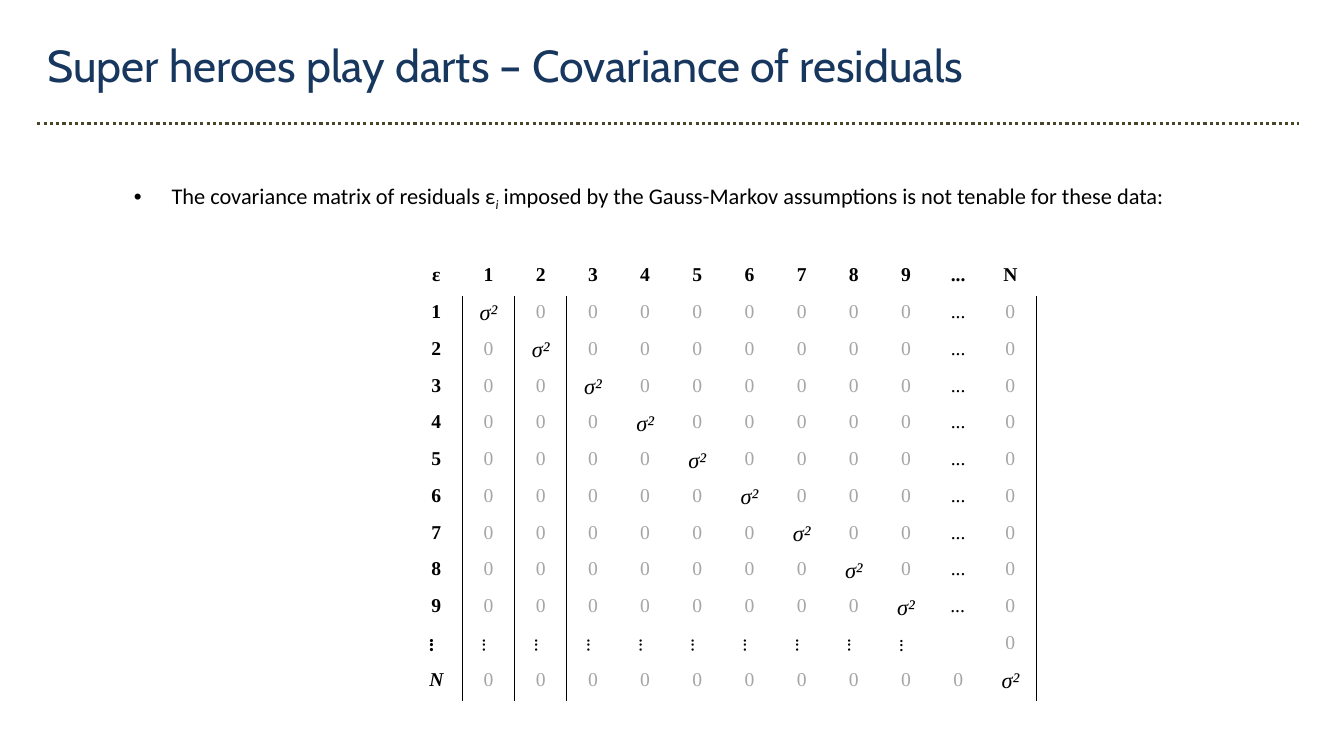
"""Build a slide that shows the covariance matrix of residuals."""
import lxml.etree
import pptx
import pptx.dml.color
import pptx.enum.dml
import pptx.enum.shapes
import pptx.enum.text
import pptx.oxml
import pptx.oxml.ns
import pptx.util

Cm = pptx.util.Cm
Pt = pptx.util.Pt
qn = pptx.oxml.ns.qn
RGBColor = pptx.dml.color.RGBColor
BLACK = RGBColor(0x00, 0x00, 0x00)
GREY = RGBColor(0xA6, 0xA6, 0xA6)
NAVY = RGBColor(0x17, 0x37, 0x5E)
OLIVE = RGBColor(0x4A, 0x45, 0x2A)
ALIGN = pptx.enum.text.PP_ALIGN


def write(para, text, font="Times New Roman", size=14, color=BLACK, bold=False, italic=False):
    run = para.add_run()
    run.text = text
    run.font.name = font
    run.font.size = Pt(size)
    run.font.color.rgb = color
    run.font.bold = bold
    run.font.italic = italic
    return run


def border(cell, sides):
    props = cell._tc.get_or_add_tcPr()
    for spot, side in enumerate(sides):
        line = pptx.oxml.parse_xml(
            f'<a:ln{side} xmlns:a="http://schemas.openxmlformats.org/drawingml/2006/main" w="{Pt(1)}">'
            f'<a:solidFill><a:srgbClr val="{BLACK}"/></a:solidFill></a:ln{side}>')
        props.insert(spot, line)


deck = pptx.Presentation()
deck.slide_width = Cm(33.87)
deck.slide_height = Cm(19.05)
slide = deck.slides.add_slide(deck.slide_layouts[1])

title = slide.shapes.title
title.left, title.top, title.width, title.height = Cm(0.94), Cm(0.81), Cm(29.59), Cm(1.63)
para = title.text_frame.paragraphs[0]
para.alignment = ALIGN.LEFT
write(para, "Super heroes play darts – Covariance of residuals", font="Cabin", size=32, color=NAVY)

body = slide.placeholders[1]
body.left, body.top, body.width, body.height = Cm(3.12), Cm(4.45), Cm(27.2), Cm(13.69)
para = body.text_frame.paragraphs[0]
props = para._p.get_or_add_pPr()
props.set("marL", str(Cm(0.95)))
props.set("indent", str(-Cm(0.95)))
write(para, "The covariance matrix of residuals ε", font="Calibri", size=16)
index = write(para, "i", font="Calibri", size=16, italic=True)
index._r.get_or_add_rPr().set("baseline", "-25000")
write(para, " imposed by the Gauss-Markov assumptions is not tenable for these data:", font="Calibri", size=16)

rule = slide.shapes.add_connector(
    pptx.enum.shapes.MSO_CONNECTOR.STRAIGHT, Cm(0.94), Cm(3.12), Cm(32.74), Cm(3.12))
rule.line.color.rgb = OLIVE
rule.line.width = Pt(2.25)
rule.line.dash_style = pptx.enum.dml.MSO_LINE.ROUND_DOT
lxml.etree.SubElement(rule._element.spPr, qn("a:effectLst"))

heads = ["ε", "1", "2", "3", "4", "5", "6", "7", "8", "9", "...", "N"]
count = len(heads)
last = count - 1
dots = count - 2
sides = {0: "R", 1: "LR", 2: "L", last: "R"}
frame = slide.shapes.add_table(count, count, Cm(10.34), Cm(6.53), Cm(15.79), Cm(11.13))
grid = frame.table
grid.first_row = False
grid.horz_banding = False
grid._tbl.tblPr.find(qn("a:tableStyleId")).text = "{2D5ABB26-0587-4C30-8999-92F81FD0307C}"

for row in range(count):
    for col in range(count):
        cell = grid.cell(row, col)
        cell.fill.background()
        if row > 0:
            border(cell, sides.get(col, ""))
        para = cell.text_frame.paragraphs[0]
        para.alignment = ALIGN.CENTER
        if row == dots and col < dots:
            cell._tc.get_or_add_tcPr().set("vert", "vert270")
        if row == 0 or col == 0:
            write(para, heads[row + col], bold=True, italic=row == last)
        elif row == col == dots:
            lxml.etree.SubElement(para._p, qn("a:endParaRPr")).set("sz", "1400")
        elif row == col:
            write(para, "σ²", size=16, italic=True)
        elif (row == dots and col < dots) or (col == dots and row < dots):
            write(para, "...", italic=dots - 1 in (row, col))
        else:
            write(para, "0", color=GREY)

deck.save("out.pptx")
